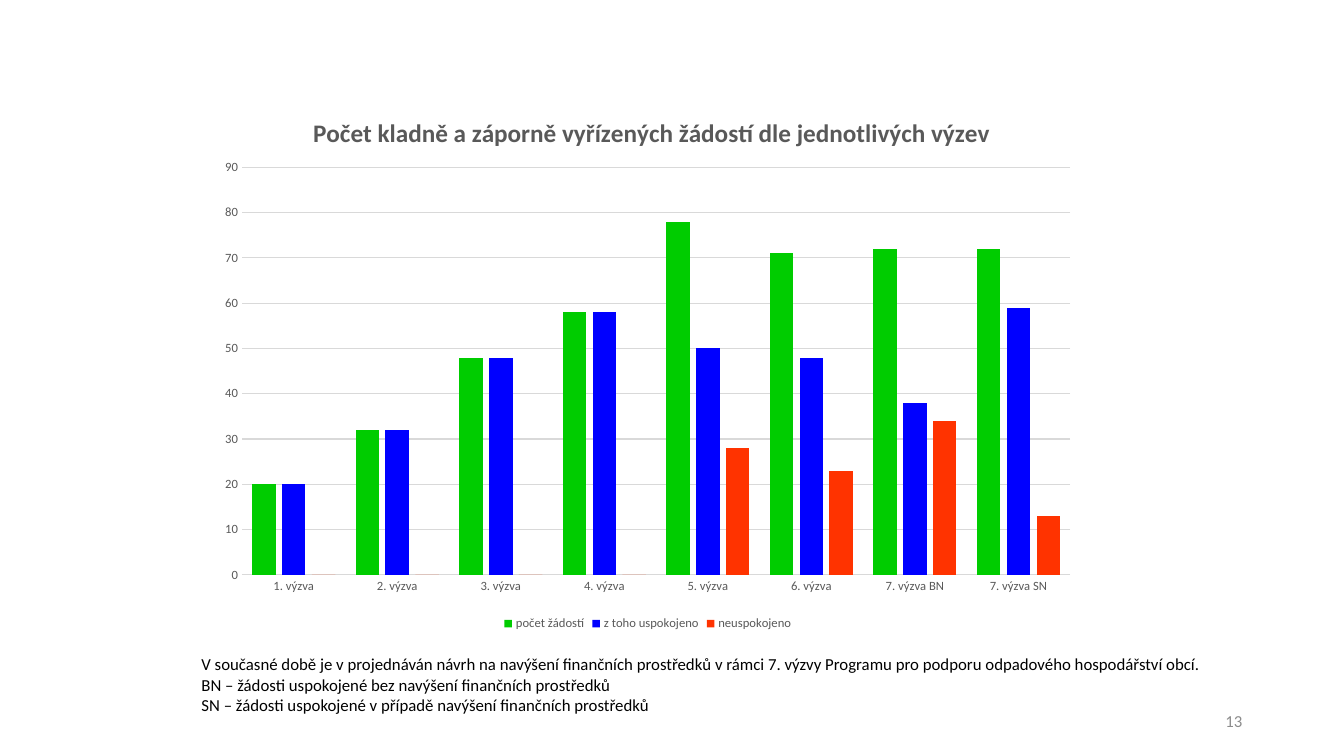
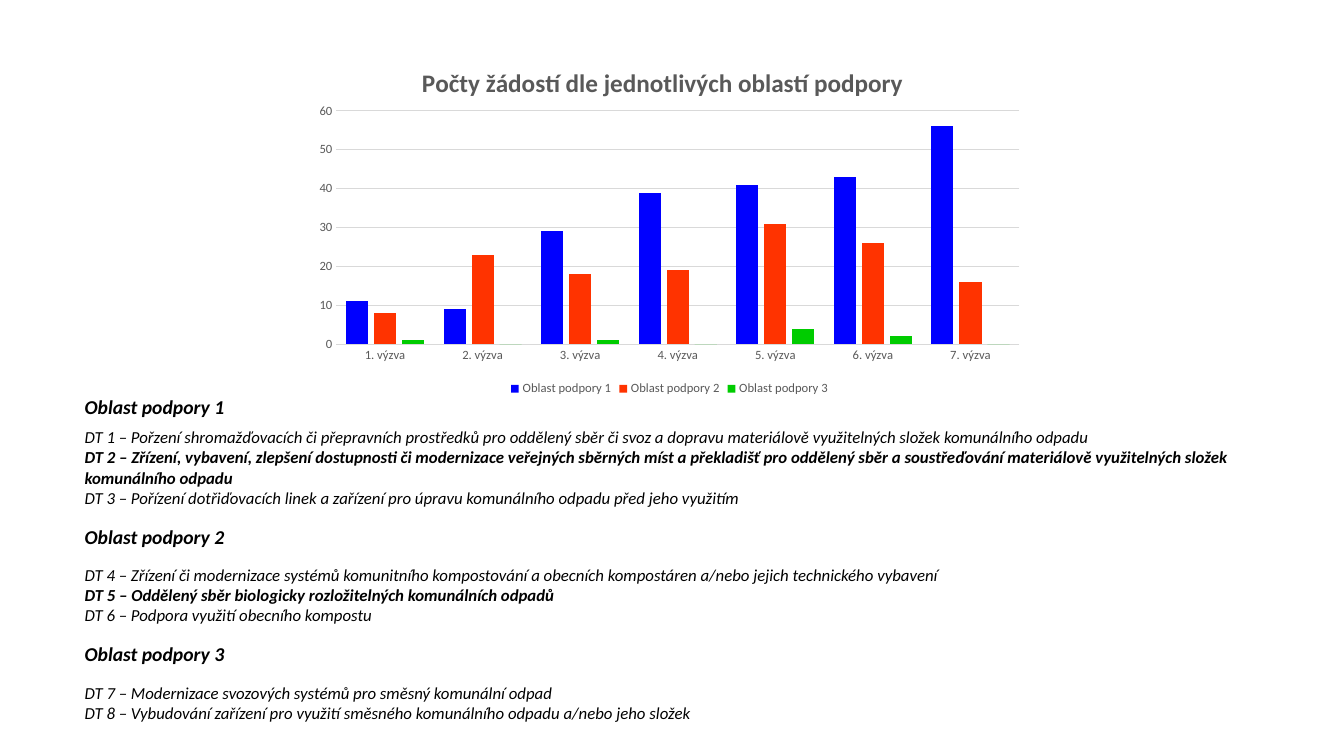
from dataclasses import dataclass
from typing import Any

from lxml import etree
from pptx import Presentation
from pptx import util as u
from pptx.chart.data import CategoryChartData
from pptx.dml.color import RGBColor
from pptx.enum import chart as charts
from pptx.enum import text
from pptx.oxml import ns

CELL = u.Inches(0.1)


@dataclass(frozen=True)
class Theme:
    font: str = "Calibri"
    ink: str = "000000"
    muted: str = "595959"
    pale: str = "8C8C8C"
    rule: str = "D9D9D9"
    green: str = "00CC00"
    blue: str = "0000FF"
    red: str = "FF3300"
    title_size: float = 18
    heading_size: float = 14
    body_size: float = 12
    axis_size: float = 9
    rule_width: float = 0.75
    gap: float = 6


THEME = Theme()


@dataclass(frozen=True)
class Box:
    column: float
    row: float
    columns: float
    rows: float

    def lengths(self) -> list[int]:
        return [round(n * CELL) for n in (self.column, self.row, self.columns, self.rows)]


@dataclass(frozen=True)
class Line:
    words: str
    size: float = THEME.body_size
    bold: bool = False
    italic: bool = False
    before: float = 0
    after: float = 0


@dataclass(frozen=True)
class Series:
    name: str
    values: tuple[int, ...]
    color: str


@dataclass(frozen=True)
class ColumnChart:
    title: str
    frame: Box
    plot: Box
    title_column: float
    title_row: float
    categories: tuple[str, ...]
    series: tuple[Series, ...]
    maximum: int
    gap_width: int


@dataclass(frozen=True)
class SupportArea:
    name: str
    topics: tuple[str, ...]
    highlighted: int | None = None


CALLS = tuple(f"{number}. výzva" for number in range(1, 8))

OUTCOMES = ColumnChart(
    "Počet kladně a záporně vyřízených žádostí dle jednotlivých výzev",
    Box(20.6, 8.7, 87.3, 54.3),
    Box(24, 16.6, 82.15, 40.45),
    30.6,
    11,
    CALLS[:6] + ("7. výzva BN", "7. výzva SN"),
    (
        Series("počet žádostí", (20, 32, 48, 58, 78, 71, 72, 72), THEME.green),
        Series("z toho uspokojeno", (20, 32, 48, 58, 50, 48, 38, 59), THEME.blue),
        Series("neuspokojeno", (0, 0, 0, 0, 28, 23, 34, 13), THEME.red),
    ),
    90,
    86,
)

AREA_COUNTS = ColumnChart(
    "Počty žádostí dle jednotlivých oblastí podpory",
    Box(30.2, 3.8, 72.4, 35.9),
    Box(33.35, 11, 67.75, 23.15),
    41.4,
    6.05,
    CALLS,
    (
        Series("Oblast podpory 1", (11, 9, 29, 39, 41, 43, 56), THEME.blue),
        Series("Oblast podpory 2", (8, 23, 18, 19, 31, 26, 16), THEME.red),
        Series("Oblast podpory 3", (1, 0, 1, 0, 4, 2, 0), THEME.green),
    ),
    60,
    88,
)

NOTES = (
    "V současné době je v projednáván návrh na navýšení finančních prostředků v rámci 7. výzvy Programu pro podporu odpadového hospodářství obcí.",
    "BN – žádosti uspokojené bez navýšení finančních prostředků",
    "SN – žádosti uspokojené v případě navýšení finančních prostředků",
)

AREAS = (
    SupportArea(
        "Oblast podpory 1",
        (
            "DT 1 – Pořzení shromažďovacích či přepravních prostředků pro oddělený sběr či svoz a dopravu materiálově využitelných složek komunálního odpadu",
            "DT 2 – Zřízení, vybavení, zlepšení dostupnosti či modernizace veřejných sběrných míst a překladišť pro oddělený sběr a soustřeďování materiálově využitelných složek komunálního odpadu",
            "DT 3 – Pořízení dotřiďovacích linek a zařízení pro úpravu komunálního odpadu před jeho využitím",
        ),
        1,
    ),
    SupportArea(
        "Oblast podpory 2",
        (
            "DT 4 – Zřízení či modernizace systémů komunitního kompostování a obecních kompostáren a/nebo jejich technického vybavení",
            "DT 5 – Oddělený sběr biologicky rozložitelných komunálních odpadů",
            "DT 6 – Podpora využití obecního kompostu",
        ),
        1,
    ),
    SupportArea(
        "Oblast podpory 3",
        (
            "DT 7 – Modernizace svozových systémů pro směsný komunální odpad",
            "DT 8 – Vybudování zařízení pro využití směsného komunálního odpadu a/nebo jeho složek",
        ),
    ),
)


def style_font(font: Any, size: float, color: str, bold: bool = False, italic: bool = False) -> None:
    font.name = THEME.font
    font.size = u.Pt(size)
    font.color.rgb = RGBColor.from_string(color)
    font.bold = bold
    font.italic = italic


def add_text(page: Any, place: Box, lines: list[Line], color: str = THEME.ink, wrap: bool = True) -> Any:
    box = page.shapes.add_textbox(*place.lengths())
    frame = box.text_frame
    frame.word_wrap = wrap
    for index, line in enumerate(lines):
        para = frame.add_paragraph() if index else frame.paragraphs[0]
        para.text = line.words
        para.space_before = u.Pt(line.before)
        para.space_after = u.Pt(line.after)
        for span in para.runs:
            style_font(span.font, line.size, color, line.bold, line.italic)
    return box


def set_layout(parent: Any, index: int, settings: dict[str, Any]) -> None:
    for old in parent.findall(ns.qn("c:layout")):
        parent.remove(old)
    layout = etree.Element(ns.qn("c:layout"))
    manual = etree.SubElement(layout, ns.qn("c:manualLayout"))
    for tag, value in settings.items():
        etree.SubElement(manual, ns.qn(f"c:{tag}")).set("val", str(value))
    parent.insert(index, layout)


def position_parts(chart: Any, design: ColumnChart) -> None:
    frame, plot = design.frame, design.plot
    edges = {"xMode": "edge", "yMode": "edge"}
    set_layout(
        chart.chart_title._element,
        1,
        edges
        | {
            "x": (design.title_column - frame.column) / frame.columns,
            "y": (design.title_row - frame.row) / frame.rows,
        },
    )
    set_layout(
        chart._chartSpace.find(f".//{ns.qn('c:plotArea')}"),
        0,
        {"layoutTarget": "inner"}
        | edges
        | {
            "x": (plot.column - frame.column) / frame.columns,
            "y": (plot.row - frame.row) / frame.rows,
            "w": plot.columns / frame.columns,
            "h": plot.rows / frame.rows,
        },
    )


def style_rule(line: Any) -> None:
    line.color.rgb = RGBColor.from_string(THEME.rule)
    line.width = u.Pt(THEME.rule_width)


def add_column_chart(page: Any, design: ColumnChart) -> None:
    data = CategoryChartData()
    data.categories = design.categories
    for series in design.series:
        data.add_series(series.name, series.values)
    chart = page.shapes.add_chart(
        charts.XL_CHART_TYPE.COLUMN_CLUSTERED, *design.frame.lengths(), data
    ).chart
    style_font(chart.font, 10, THEME.ink)

    para = chart.chart_title.text_frame.paragraphs[0]
    para.text = design.title
    style_font(para.runs[0].font, THEME.title_size, THEME.muted, bold=True)
    chart.chart_title.include_in_layout = False

    chart.has_legend = True
    chart.legend.position = charts.XL_LEGEND_POSITION.BOTTOM
    chart.legend.include_in_layout = False
    style_font(chart.legend.font, THEME.axis_size, THEME.muted)

    for axis in (chart.category_axis, chart.value_axis):
        axis.major_tick_mark = charts.XL_TICK_MARK.NONE
        axis.minor_tick_mark = charts.XL_TICK_MARK.NONE
        style_font(axis.tick_labels.font, THEME.axis_size, THEME.muted)
    style_rule(chart.category_axis.format.line)
    values = chart.value_axis
    values.format.line.fill.background()
    values.has_major_gridlines = True
    style_rule(values.major_gridlines.format.line)
    values.minimum_scale, values.maximum_scale, values.major_unit = 0, design.maximum, 10

    bars = chart.plots[0]
    bars.gap_width, bars.overlap, bars.vary_by_categories = design.gap_width, -27, False
    for drawn, series in zip(bars.series, design.series):
        drawn.invert_if_negative = False
        drawn.format.fill.solid()
        drawn.format.fill.fore_color.rgb = RGBColor.from_string(series.color)
    position_parts(chart, design)


def area_lines(areas: tuple[SupportArea, ...]) -> list[Line]:
    lines: list[Line] = []
    for area in areas:
        edge = THEME.gap if lines else 0
        lines.append(Line(area.name, THEME.heading_size, True, True, edge, edge))
        last = len(area.topics) - 1
        for index, topic in enumerate(area.topics):
            lines.append(
                Line(
                    topic,
                    bold=index == area.highlighted,
                    italic=True,
                    before=THEME.gap if index == 0 else 0,
                    after=THEME.gap if index == last else 0,
                )
            )
    return lines


def add_page_number(page: Any, number: int) -> None:
    box = add_text(page, Box(94.2, 69.5, 30, 4), [Line(str(number))], THEME.pale)
    box.text_frame.vertical_anchor = text.MSO_ANCHOR.MIDDLE
    box.text_frame.paragraphs[0].alignment = text.PP_ALIGN.RIGHT


def main() -> None:
    deck = Presentation()
    deck.slide_width, deck.slide_height = u.Inches(13.33), u.Inches(7.5)
    outcomes, areas = (deck.slides.add_slide(deck.slide_layouts[6]) for _ in range(2))

    add_page_number(outcomes, 13)
    add_column_chart(outcomes, OUTCOMES)
    add_text(outcomes, Box(19, 64.4, 102, 7.1), [Line(note) for note in NOTES], wrap=False)

    add_text(areas, Box(7.4, 38.7, 115.5, 38.7), area_lines(AREAS))
    add_column_chart(areas, AREA_COUNTS)
    deck.save("out.pptx")


if __name__ == "__main__":
    main()
